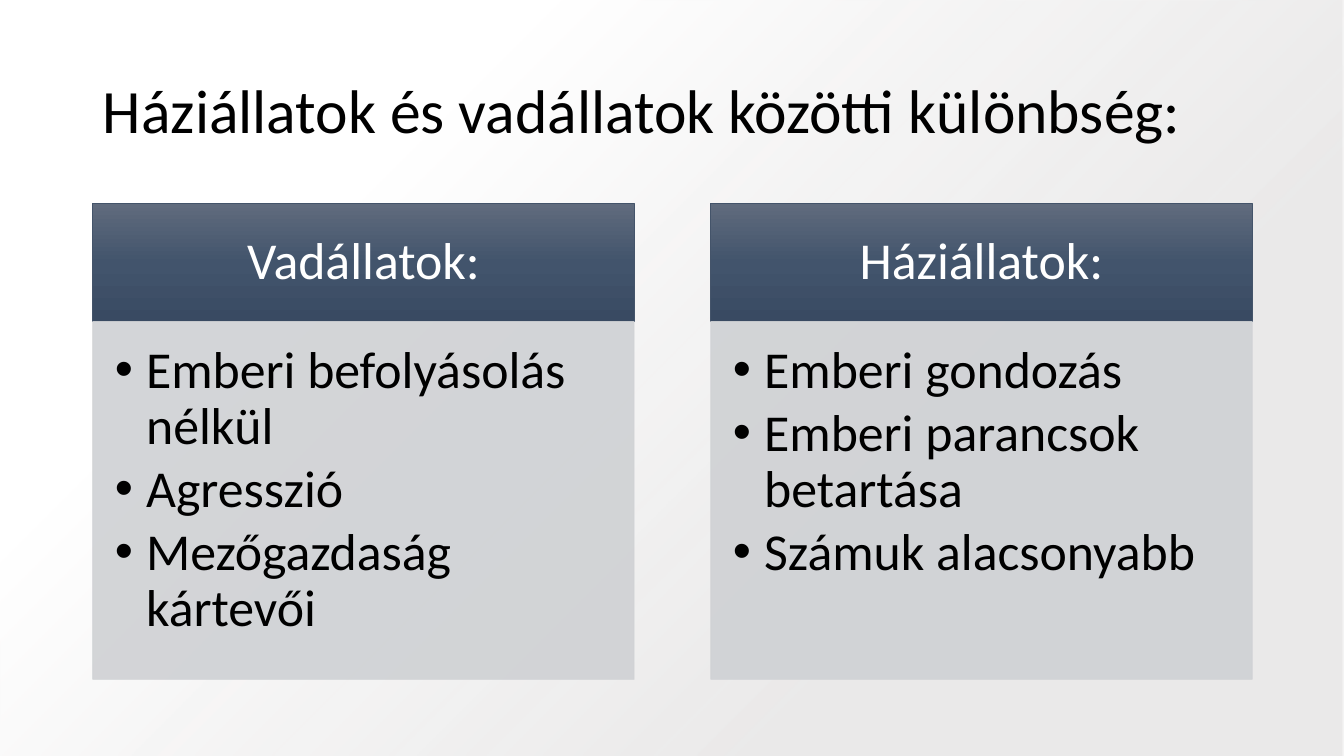
from dataclasses import dataclass

from lxml import etree
from pptx import Presentation
from pptx.dml.color import RGBColor
from pptx.enum import shapes, text
from pptx.oxml import ns
from pptx.util import Inches, Pt


@dataclass(frozen=True)
class Theme:
    font: str = "Calibri"
    title_size: int = 44
    text_size: int = 37
    dark: str = "000000"
    light: str = "FFFFFF"
    header_line: str = "44546A"
    header_stops: tuple = ((0, "606B7D", 100), (50, "42546C", 100), (100, "394A62", 100))
    panel: str = "CFD1D4"
    panel_opacity: int = 90
    backdrop_stops: tuple = ((28, "E7E6E6", 84), (74, "FFFFFF", 100))


THEME = Theme()
WIDTH, HEIGHT = 13.33, 7.5
MARGIN, CONTENT_WIDTH = 0.92, 11.5
COLUMN_TOP, COLUMN_WIDTH = 2.02, 5.37
HEADER_HEIGHT, PANEL_HEIGHT = 1.17, 3.55

TITLE = "Háziállatok és vadállatok közötti különbség:"
COLUMNS = {
    "Vadállatok:": ["Emberi befolyásolás nélkül", "Agresszió", "Mezőgazdaság kártevői"],
    "Háziállatok:": ["Emberi gondozás", "Emberi parancsok betartása", "Számuk alacsonyabb"],
}


def add_child(parent, tag, **attributes):
    child = etree.SubElement(parent, ns.qn(f"a:{tag}"))
    for name, value in attributes.items():
        child.set(name, str(value))
    return child


def set_opacity(color, percent):
    if percent < 100:
        add_child(color, "alpha", val=percent * 1000)


def fill_gradient(shape, stops):
    """Give the shape a gradient of (position, colour, opacity) stops; return its element."""
    shape.fill.background()
    no_fill = shape.element.spPr.find(ns.qn("a:noFill"))
    gradient = etree.Element(ns.qn("a:gradFill"), rotWithShape="1")
    stop_list = add_child(gradient, "gsLst")
    for position, color, opacity in stops:
        stop = add_child(stop_list, "gs", pos=position * 1000)
        set_opacity(add_child(stop, "srgbClr", val=color), opacity)
    no_fill.getparent().replace(no_fill, gradient)
    return gradient


def add_rectangle(slide, left, top, width, height):
    box = map(Inches, (left, top, width, height))
    rectangle = slide.shapes.add_shape(shapes.MSO_SHAPE.RECTANGLE, *box)
    rectangle.shadow.inherit = False
    return rectangle


def set_frame(frame, anchor, insets):
    sides = dict(zip(("left", "top", "right", "bottom"), map(Inches, insets)))
    settings = {f"margin_{side}": inset for side, inset in sides.items()}
    settings |= {"word_wrap": True, "vertical_anchor": anchor,
                 "auto_size": text.MSO_AUTO_SIZE.NONE}
    for name, value in settings.items():
        setattr(frame, name, value)


def write(paragraph, words, size, color, align):
    run = paragraph.add_run()
    run.text = words
    paragraph.alignment, paragraph.line_spacing = align, 0.9
    for name, value in {"name": THEME.font, "size": Pt(size)}.items():
        setattr(run.font, name, value)
    run.font.color.rgb = RGBColor.from_string(color)


def add_bullet(paragraph):
    indent = Inches(0.31)
    properties = paragraph._p.get_or_add_pPr()
    properties.set("marL", str(indent))
    properties.set("indent", str(-indent))
    add_child(properties, "buFont", typeface="Arial")
    add_child(properties, "buChar", char="•")


def add_backdrop(slide, left, top, width, height):
    backdrop = add_rectangle(slide, left, top, width, height)
    backdrop.line.fill.background()
    gradient = fill_gradient(backdrop, THEME.backdrop_stops)
    circle = add_child(gradient, "path", path="circle")
    add_child(circle, "fillToRect", l=100000, t=100000)
    add_child(gradient, "tileRect", r=-100000, b=-100000)
    slide.shapes.title.element.addprevious(backdrop.element)


def set_title(slide, left, top, width, height):
    title = slide.shapes.title
    box = {"left": left, "top": top, "width": width, "height": height}
    for name, value in box.items():
        setattr(title, name, Inches(value))
    set_frame(title.text_frame, text.MSO_ANCHOR.MIDDLE, (0.1, 0.05, 0.1, 0.05))
    write(title.text_frame.paragraphs[0], TITLE, THEME.title_size, THEME.dark,
          text.PP_ALIGN.LEFT)


def add_header(slide, heading, left, top, width, height):
    header = add_rectangle(slide, left, top, width, height)
    add_child(fill_gradient(header, THEME.header_stops), "lin", ang=90 * 60000, scaled=0)
    header.line.color.rgb = RGBColor.from_string(THEME.header_line)
    header.line.width = Pt(0.5)
    set_frame(header.text_frame, text.MSO_ANCHOR.MIDDLE, (0.29, 0.16, 0.29, 0.16))
    write(header.text_frame.paragraphs[0], heading, THEME.text_size, THEME.light,
          text.PP_ALIGN.CENTER)


def add_panel(slide, traits, left, top, width, height):
    panel = add_rectangle(slide, left, top, width, height)
    panel.fill.solid()
    panel.line.width = Pt(0.5)
    for color in (panel.fill.fore_color, panel.line.color):
        color.rgb = RGBColor.from_string(THEME.panel)
    for color in panel.element.spPr.iter(ns.qn("a:srgbClr")):
        set_opacity(color, THEME.panel_opacity)
    frame = panel.text_frame
    set_frame(frame, text.MSO_ANCHOR.TOP, (0.22, 0.22, 0.29, 0.32))
    for index, trait in enumerate(traits):
        paragraph = frame.add_paragraph() if index else frame.paragraphs[0]
        write(paragraph, trait, THEME.text_size, THEME.dark, text.PP_ALIGN.LEFT)
        paragraph.space_after = Pt(5)
        add_bullet(paragraph)


def add_comparison(slide, left, top, width):
    step = (width - COLUMN_WIDTH) / (len(COLUMNS) - 1)
    for index, (heading, traits) in enumerate(COLUMNS.items()):
        column_left = left + index * step
        add_header(slide, heading, column_left, top, COLUMN_WIDTH, HEADER_HEIGHT)
        add_panel(slide, traits, column_left, top + HEADER_HEIGHT, COLUMN_WIDTH, PANEL_HEIGHT)


def main():
    deck = Presentation()
    deck.slide_width, deck.slide_height = Inches(WIDTH), Inches(HEIGHT)
    slide = deck.slides.add_slide(deck.slide_layouts[5])
    add_backdrop(slide, 0, 0, WIDTH, HEIGHT)
    set_title(slide, MARGIN, 0.4, CONTENT_WIDTH, 1.45)
    add_comparison(slide, MARGIN, COLUMN_TOP, CONTENT_WIDTH)
    deck.save("out.pptx")


if __name__ == "__main__":
    main()
